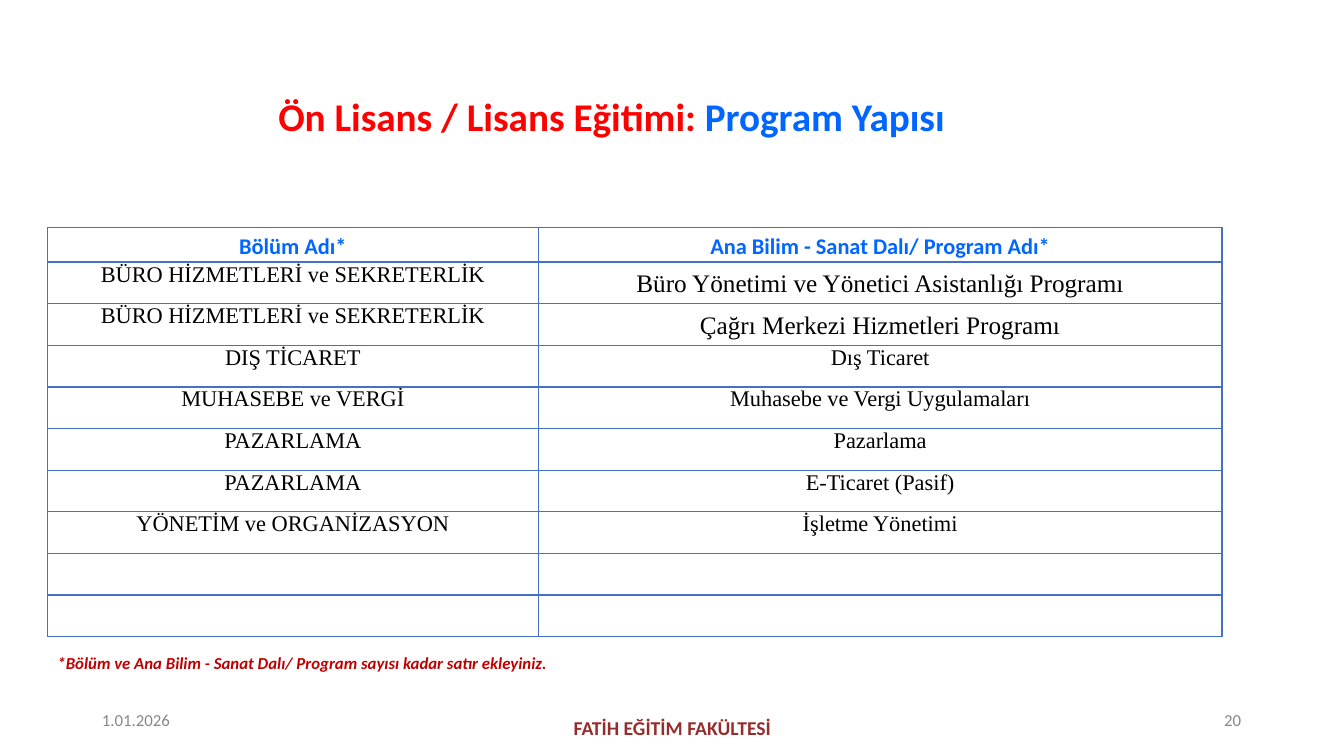
"""Build the slide that lists departments and their programmes."""
from dataclasses import dataclass

from lxml import etree
from pptx import Presentation
from pptx.dml.color import RGBColor
from pptx.enum.text import MSO_ANCHOR, PP_ALIGN
from pptx.oxml.ns import qn
from pptx.util import Inches, Pt

LEFT, CENTER = PP_ALIGN.LEFT, PP_ALIGN.CENTER
TOP, MIDDLE = MSO_ANCHOR.TOP, MSO_ANCHOR.MIDDLE


@dataclass(frozen=True)
class Theme:
    sans: str = "Calibri"
    serif: str = "Times New Roman"
    red: str = "FF0000"
    blue: str = "0066FF"
    gray: str = "888888"
    maroon: str = "952D2D"
    note_red: str = "C00000"
    black: str = "000000"
    border: str = "4471C4"
    title_size: int = 28
    large_size: int = 18
    body_size: int = 16
    faculty_size: int = 14
    small_size: int = 12


theme = Theme()


def style(para, font_name, size, color, bold=False, align=LEFT):
    para.alignment = align
    para.font.name = font_name
    para.font.size = Pt(size)
    para.font.bold = bold
    para.font.color.rgb = RGBColor.from_string(color)


def add_text(page, left, top, width, height, text, size, color, bold=False):
    box = page.shapes.add_textbox(Inches(left), Inches(top), Inches(width), Inches(height))
    frame = box.text_frame
    frame.word_wrap = True
    frame.margin_left = frame.margin_top = frame.margin_right = frame.margin_bottom = 0
    para = frame.paragraphs[0]
    para.add_run().text = text
    style(para, theme.sans, size, color, bold)
    return para


deck = Presentation()
deck.slide_width, deck.slide_height = Inches(13.33), Inches(7.5)
page = deck.slides.add_slide(deck.slide_layouts[6])

title = add_text(page, 2.76, 0.92, 9.02, 0.77, "Ön Lisans / Lisans Eğitimi: ",
                 theme.title_size, theme.red, True)
span = title.add_run()
span.text = "Program Yapısı"
span.font.color.rgb = RGBColor.from_string(theme.blue)

header = ("Bölüm Adı*", "Ana Bilim - Sanat Dalı/ Program Adı*")
programs = [
    ("BÜRO HİZMETLERİ ve SEKRETERLİK", "Büro Yönetimi ve Yönetici Asistanlığı Programı"),
    ("BÜRO HİZMETLERİ ve SEKRETERLİK", "Çağrı Merkezi Hizmetleri Programı"),
    ("DIŞ TİCARET", "Dış Ticaret"),
    ("MUHASEBE ve VERGİ", "Muhasebe ve Vergi Uygulamaları"),
    ("PAZARLAMA", "Pazarlama"),
    ("PAZARLAMA", "E-Ticaret (Pasif)"),
    ("YÖNETİM ve ORGANİZASYON", "İşletme Yönetimi"),
    ("", ""),
    ("", ""),
]
rows = [header, *programs]
column_widths = (4.87, 6.78)
header_height, table_height = 0.34, 4.06
row_height = (table_height - header_height) / len(programs)

table = page.shapes.add_table(len(rows), len(header), Inches(0.47), Inches(2.26),
                              Inches(sum(column_widths)), Inches(table_height)).table
table.first_row = table.horz_banding = False
for column, width in zip(table.columns, column_widths):
    column.width = Inches(width)

for row_index, texts in enumerate(rows):
    is_header = row_index == 0
    table.rows[row_index].height = Inches(header_height if is_header else row_height)
    for column_index, text in enumerate(texts):
        is_large = column_index == 1 and row_index in (1, 2)
        cell = table.cell(row_index, column_index)
        cell.margin_left = cell.margin_right = Inches(0.05 if is_large else 0)
        cell.margin_top = Inches(0.05 if is_header else 0)
        cell.margin_bottom = 0
        cell.vertical_anchor = MIDDLE if is_large else TOP
        para = cell.text_frame.paragraphs[0]
        para.text = text
        if is_header:
            style(para, theme.sans, theme.body_size, theme.blue, True, CENTER)
        else:
            size = theme.large_size if is_large else theme.body_size
            style(para, theme.serif, size, theme.black, align=CENTER)
        if is_large:
            para.line_spacing = 1.07
        properties = cell._tc.get_or_add_tcPr()
        for side in ("a:lnL", "a:lnR", "a:lnT", "a:lnB"):
            line = etree.SubElement(properties, qn(side), w=str(Pt(1)))
            fill = etree.SubElement(line, qn("a:solidFill"))
            etree.SubElement(fill, qn("a:srgbClr"), val=theme.border)
        cell.fill.background()

note = add_text(page, 0.57, 6.48, 4.95, 0.21,
                "*Bölüm ve Ana Bilim - Sanat Dalı/ Program sayısı kadar satır ekleyiniz.",
                theme.small_size, theme.note_red, True)
note.font.italic = True

footers = [
    (1.01, 7.07, 0.75, 0.2, "1.01.2026", theme.small_size, theme.gray, False, 12.4),
    (12.14, 7.07, 0.25, 0.2, "20", theme.small_size, theme.gray, False, 12.4),
    (5.69, 7.14, 2.1, 0.22, "FATİH EĞİTİM FAKÜLTESİ", theme.faculty_size, theme.maroon, True, 14.3),
]
for *settings, spacing in footers:
    add_text(page, *settings).line_spacing = Pt(spacing)

deck.save("out.pptx")
